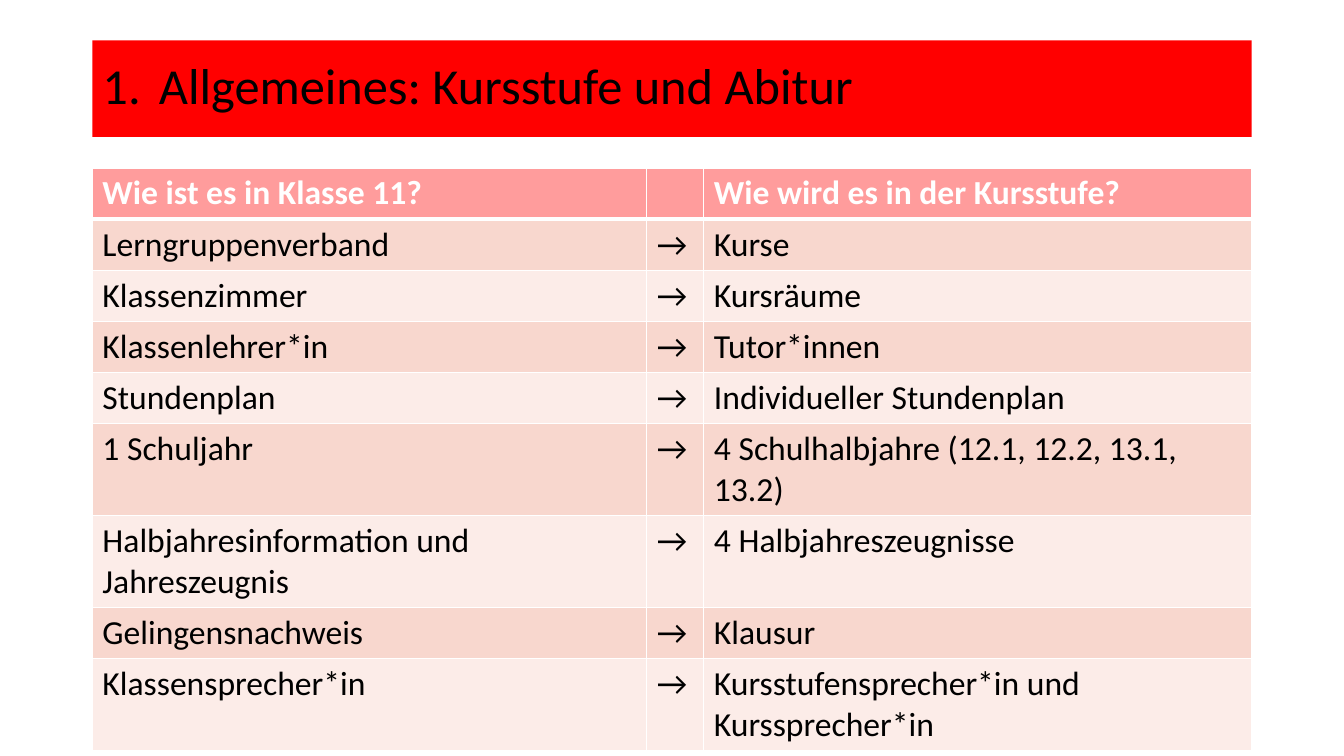
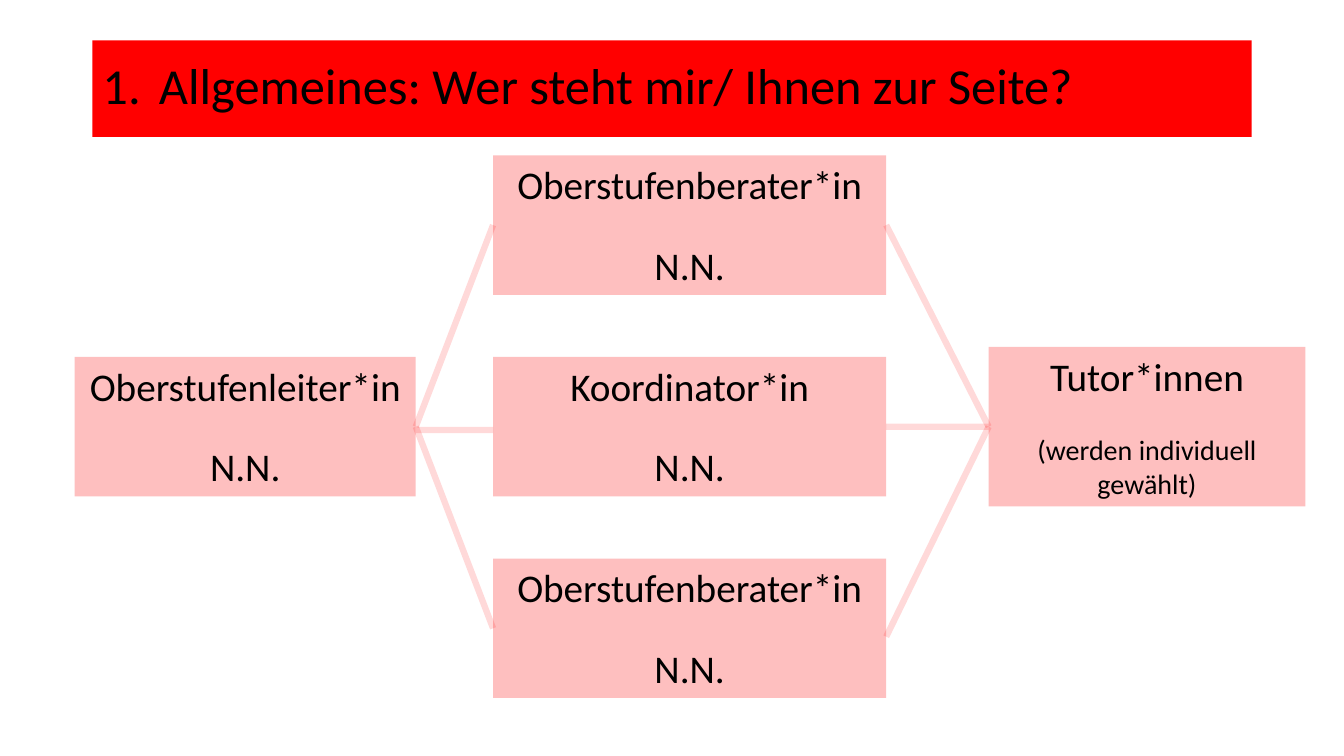
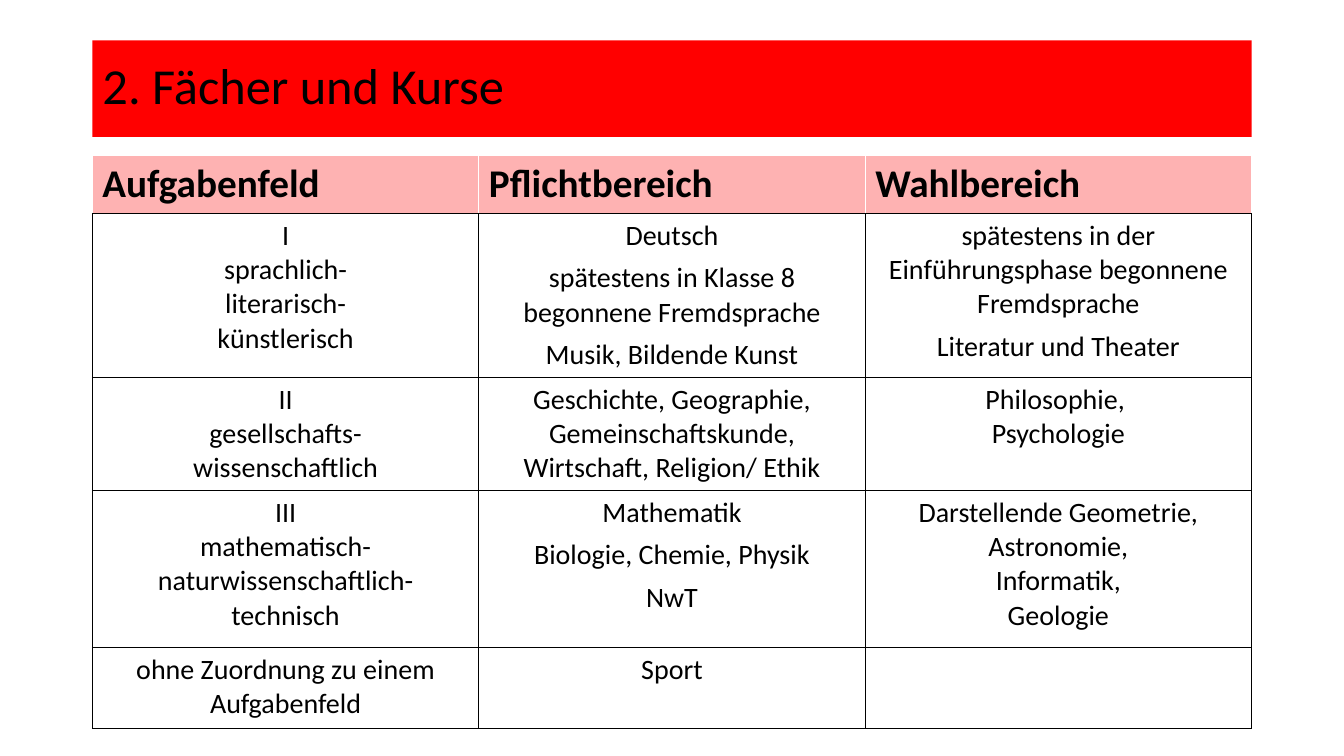
from lxml import etree
from pptx import Presentation
from pptx.dml.color import RGBColor
from pptx.enum.shapes import MSO_CONNECTOR, MSO_SHAPE
from pptx.enum.text import MSO_ANCHOR, MSO_AUTO_SIZE, PP_ALIGN
from pptx.oxml.ns import qn
from pptx.util import Inches, Pt

RED = RGBColor(0xFF, 0x00, 0x00)
BOX_RED = RGBColor(0xFE, 0x00, 0x00)
BLACK = RGBColor(0x00, 0x00, 0x00)
WHITE = RGBColor(0xFF, 0xFF, 0xFF)
BAND_DARK = RGBColor(0xF8, 0xD7, 0xCE)
BAND_LIGHT = RGBColor(0xFC, 0xEC, 0xE8)

LEFT, CENTER = PP_ALIGN.LEFT, PP_ALIGN.CENTER
TOP, MIDDLE = MSO_ANCHOR.TOP, MSO_ANCHOR.MIDDLE
FIT_TEXT, NO_FIT = MSO_AUTO_SIZE.SHAPE_TO_FIT_TEXT, MSO_AUTO_SIZE.NONE
RECTANGLE, STRAIGHT = MSO_SHAPE.RECTANGLE, MSO_CONNECTOR.STRAIGHT
LEFT_SIDE, RIGHT_SIDE = 1, 3

GRID_COLUMNS, GRID_ROWS = 16, 9
TITLE_ONLY = 5
FONT = "Calibri"
MARGIN, CONTENT_WIDTH = 1.1, 13.8


def apply(target, **values):
    for name, value in values.items():
        setattr(target, name, value)


def paint(fill, colour, opacity=100):
    fill.solid()
    fill.fore_color.rgb = colour
    if opacity < 100:
        clr = fill._xPr.find(".//" + qn("a:srgbClr"))
        etree.SubElement(clr, qn("a:alpha"), val=str(opacity * 1000))


def set_borders(cell, **sides):
    """Each side (L, R, T, B) is given as (colour, points)."""
    tc_pr = cell._tc.get_or_add_tcPr()
    for i, side in enumerate("LRTB"):
        colour, points = sides[side]
        ln = etree.Element(qn("a:ln" + side), w=str(Pt(points)))
        solid = etree.SubElement(ln, qn("a:solidFill"))
        etree.SubElement(solid, qn("a:srgbClr"), val=str(colour))
        tc_pr.insert(i, ln)


class Deck:
    def __init__(self):
        self.prs = Presentation()
        apply(self.prs, slide_width=Inches(13.33), slide_height=Inches(7.5))
        self.s = None

    def grid_x(self, columns):
        return round(columns * self.prs.slide_width / GRID_COLUMNS)

    def grid_y(self, rows):
        return round(rows * self.prs.slide_height / GRID_ROWS)

    def place(self, left, top, width, height):
        return (self.grid_x(left), self.grid_y(top),
                self.grid_x(width), self.grid_y(height))

    def add_lines(self, tf, lines, size, colour=BLACK, bold=False,
                  **paragraph):
        """Sizes may differ by line; paragraph formats are shared."""
        sizes = size if isinstance(size, tuple) else (size,) * len(lines)
        for i, (line, points) in enumerate(zip(lines, sizes)):
            p = tf.add_paragraph() if i else tf.paragraphs[0]
            apply(p, **paragraph)
            r = p.add_run()
            r.text = line
            apply(r.font, name=FONT, size=Pt(points), bold=bold)
            r.font.color.rgb = colour

    def slide(self, title, numbered=False):
        self.s = self.prs.slides.add_slide(
            self.prs.slide_layouts[TITLE_ONLY])
        sp = self.s.shapes.title
        left, top, width, height = self.place(MARGIN, 0.48,
                                              CONTENT_WIDTH, 1.15)
        apply(sp, left=left, top=top, width=width, height=height)
        paint(sp.fill, RED)
        tf = sp.text_frame
        apply(tf, word_wrap=True, auto_size=NO_FIT, vertical_anchor=MIDDLE)
        self.add_lines(tf, [title], 36, alignment=LEFT, line_spacing=0.9)
        if numbered:
            p_pr = tf.paragraphs[0]._p.get_or_add_pPr()
            indent = Inches(0.56)
            p_pr.set("marL", str(indent))
            p_pr.set("indent", str(-indent))
            etree.SubElement(p_pr, qn("a:buFont"), typeface="+mj-lt")
            etree.SubElement(p_pr, qn("a:buAutoNum"), type="arabicPeriod")

    def box(self, left, middle, width, height, lines, size=28):
        sp = self.s.shapes.add_shape(
            RECTANGLE, *self.place(left, middle - height / 2, width, height))
        sp.shadow.inherit = False
        paint(sp.fill, BOX_RED, 25)
        sp.line.fill.background()
        tf = sp.text_frame
        apply(tf, word_wrap=True, auto_size=FIT_TEXT, vertical_anchor=TOP)
        self.add_lines(tf, lines, size, alignment=CENTER,
                       space_before=Pt(12), space_after=Pt(12))
        return sp

    def link(self, start, end, start_drop=0, end_drop=0):
        """Line from right side to left side; a drop shifts an end down."""
        line = self.s.shapes.add_connector(
            STRAIGHT,
            start.left + start.width,
            start.top + start.height // 2 + self.grid_y(start_drop),
            end.left,
            end.top + end.height // 2 + self.grid_y(end_drop))
        if not start_drop:
            line.begin_connect(start, RIGHT_SIDE)
        if not end_drop:
            line.end_connect(end, LEFT_SIDE)
        line.line.width = Pt(4.5)
        paint(line.line.fill, RED, 15)
        etree.SubElement(line._element.spPr, qn("a:effectLst"))

    def table(self, top, columns, heights, rows, header, body, line, rule,
              bands=()):
        """rule is the border below the header; a tuple cell is spaced."""
        tbl = self.s.shapes.add_table(
            len(rows), len(columns),
            *self.place(MARGIN, top, CONTENT_WIDTH, sum(heights))).table
        for column, width in zip(tbl.columns, columns):
            column.width = self.grid_x(width)
        for row, height in zip(tbl.rows, heights):
            row.height = self.grid_y(height)
        for i, row in enumerate(rows):
            edge = line if i else (WHITE, 1)
            borders = {"L": edge, "R": edge,
                       "T": rule if i == 1 else edge,
                       "B": edge if i else rule}
            for j, text in enumerate(row):
                cell = tbl.cell(i, j)
                if not i:
                    paint(cell.fill, *header["fill"])
                elif bands:
                    paint(cell.fill, bands[(i - 1) % len(bands)])
                else:
                    cell.fill.background()
                set_borders(cell, **borders)
                if text:
                    spaced = isinstance(text, tuple)
                    lines = text if spaced else text.split("\n")
                    self.add_lines(cell.text_frame, lines,
                                   **(body if i else header["text"]),
                                   space_before=Pt(6 if spaced else 0))


def comparison_slide(deck):
    deck.slide("Allgemeines: Kursstufe und Abitur", numbered=True)
    changes = [
        ("Lerngruppenverband", "Kurse"),
        ("Klassenzimmer", "Kursräume"),
        ("Klassenlehrer*in", "Tutor*innen"),
        ("Stundenplan", "Individueller Stundenplan"),
        ("1 Schuljahr", "4 Schulhalbjahre (12.1, 12.2, 13.1, 13.2)"),
        ("Halbjahresinformation und Jahreszeugnis", "4 Halbjahreszeugnisse"),
        ("Gelingensnachweis", "Klausur"),
        ("Klassensprecher*in", "Kursstufensprecher*in und Kurssprecher*in"),
    ]
    rows = [("Wie ist es in Klasse 11?", "", "Wie wird es in der Kursstufe?")]
    rows += [(before, "→", after) for before, after in changes]
    deck.table(2, (6.6, 0.68, 6.52), [0.49] * len(rows), rows,
               header={"fill": (RED, 39),
                       "text": {"size": 24, "colour": WHITE, "bold": True}},
               body={"size": 24}, line=(WHITE, 1), rule=(WHITE, 3),
               bands=(BAND_DARK, BAND_LIGHT))


def contacts_slide(deck):
    deck.slide("Allgemeines: Wer steht mir/ Ihnen zur Seite?", numbered=True)
    middle, pitch, height = 5.08, 2.4, 1.66
    leader = deck.box(0.89, middle, 4.06, height,
                      ["Oberstufenleiter*in", "N.N."])
    roles = ("Oberstufenberater*in", "Koordinator*in", "Oberstufenberater*in")
    upper, coordinator, lower = [
        deck.box(5.87, middle + (i - 1) * pitch, 4.68, height, [role, "N.N."])
        for i, role in enumerate(roles)]
    tutors = deck.box(11.77, middle, 3.77, 1.9,
                      ["Tutor*innen", "(werden individuell gewählt)"],
                      size=(28, 20))
    deck.link(leader, upper)
    deck.link(leader, coordinator, start_drop=0.04, end_drop=0.04)
    deck.link(leader, lower)
    deck.link(upper, tutors)
    deck.link(coordinator, tutors)
    deck.link(lower, tutors, start_drop=0.1)


def subjects_slide(deck):
    deck.slide("2. Fächer und Kurse")
    rows = [
        ("Aufgabenfeld", "Pflichtbereich", "Wahlbereich"),
        ("I\nsprachlich-\nliterarisch-\nkünstlerisch",
         ("Deutsch", "spätestens in Klasse 8 begonnene Fremdsprache",
          "Musik, Bildende Kunst"),
         ("spätestens in der Einführungsphase begonnene Fremdsprache",
          "Literatur und Theater")),
        ("II\ngesellschafts-\nwissenschaftlich",
         "Geschichte, Geographie, Gemeinschaftskunde, "
         "Wirtschaft, Religion/ Ethik",
         "Philosophie, \nPsychologie"),
        ("III\nmathematisch-naturwissenschaftlich-\ntechnisch",
         ("Mathematik", "Biologie, Chemie, Physik", "NwT"),
         "Darstellende Geometrie,\nAstronomie,\nInformatik,\nGeologie"),
        ("ohne Zuordnung zu einem Aufgabenfeld", "Sport", ""),
    ]
    deck.table(1.85, [CONTENT_WIDTH / 3] * 3, (0.67, 1.79, 1.16, 1.87, 0.96),
               rows,
               header={"fill": (BOX_RED, 30),
                       "text": {"size": 28, "bold": True}},
               body={"size": 20, "alignment": CENTER},
               line=(BLACK, 1), rule=(BLACK, 1))


def main():
    deck = Deck()
    comparison_slide(deck)
    contacts_slide(deck)
    subjects_slide(deck)
    deck.prs.save("out.pptx")


if __name__ == "__main__":
    main()
